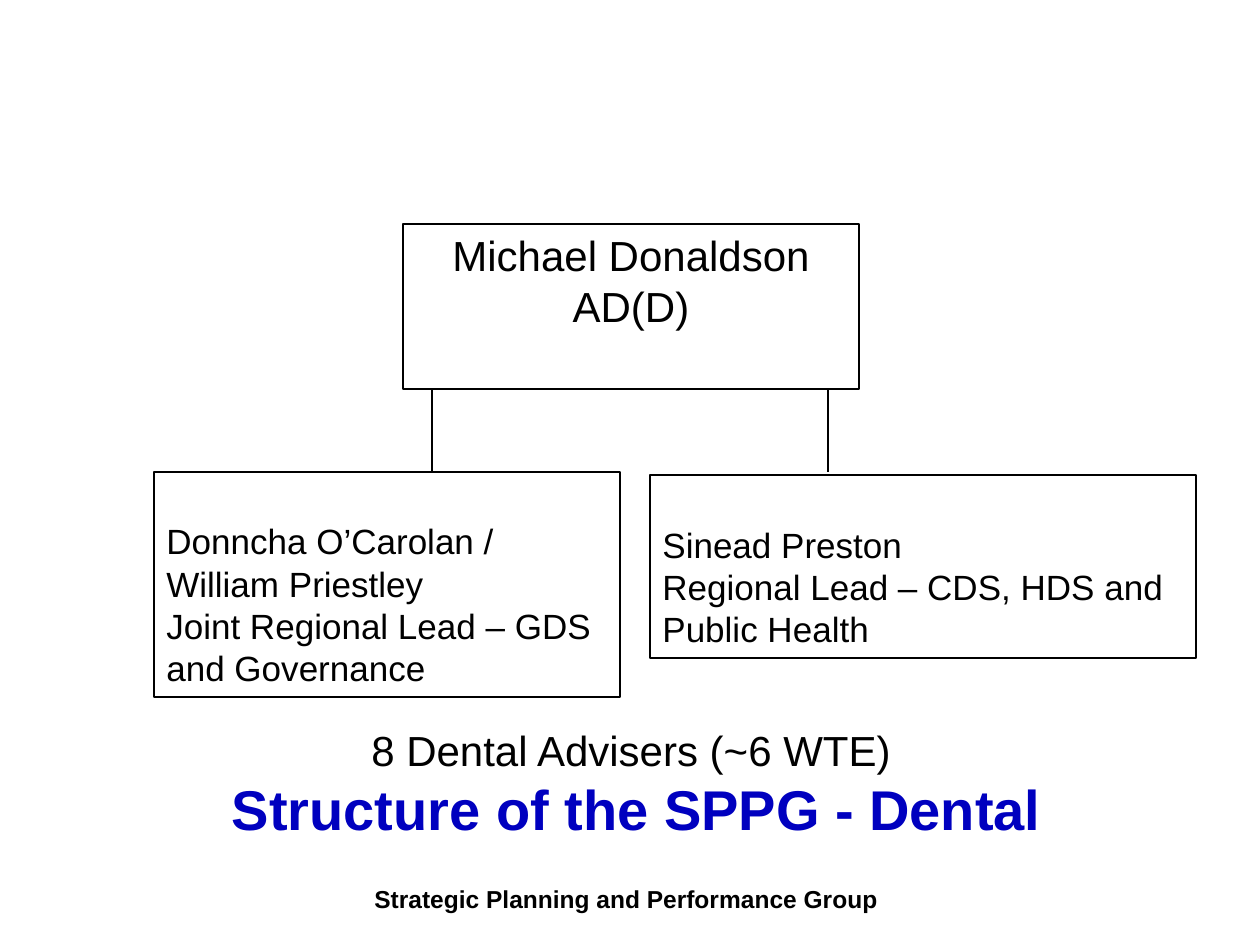
"""Builds the organisation chart slide of the SPPG dental team."""
from lxml import etree
from pptx import Presentation
from pptx.dml.color import RGBColor
from pptx.enum.shapes import MSO_CONNECTOR, MSO_SHAPE
from pptx.enum.text import MSO_ANCHOR, PP_ALIGN
from pptx.oxml.ns import qn
from pptx.util import Pt

RECT = MSO_SHAPE.RECTANGLE
LINE = MSO_CONNECTOR.STRAIGHT
TOP = MSO_ANCHOR.TOP
LEFT, MID = PP_ALIGN.LEFT, PP_ALIGN.CENTER
SCALE = 914400 / 126
HUES = {"ink": "000000", "blue": "0000BF"}


def px(*vals):
    return [round(val * SCALE) for val in vals]


def write(shape, paras, align, pad=6):
    frame = shape.text_frame
    frame.word_wrap = True
    frame.vertical_anchor = TOP
    frame.margin_top = px(pad)[0]
    for num, runs in enumerate(paras):
        para = frame.add_paragraph() if num else frame.paragraphs[0]
        para.alignment = align
        for text, size, bold, hue in runs:
            run = para.add_run()
            run.text = text
            font = run.font
            font.name, font.size, font.bold = "Arial", Pt(size), bold
            font.color.rgb = RGBColor.from_string(HUES[hue])


deck = Presentation()
deck.slide_width, deck.slide_height = px(1260, 945)
slide = deck.slides.add_slide(deck.slide_layouts[6])
shapes = slide.shapes
ink = RGBColor.from_string(HUES["ink"])

group = shapes.add_textbox(*px(362, 878, 586, 50))
write(group, [[("Strategic Planning and Performance Group", 14, True, "ink")]], LEFT)

posts = [
    ((154, 472, 466, 225), 20, LEFT, 48,
     ["Donncha O’Carolan / William Priestley",
      "Joint Regional Lead – GDS and Governance"]),
    ((650, 475, 546, 183), 20, LEFT, 48,
     ["Sinead Preston", "Regional Lead – CDS, HDS and Public Health"]),
    ((403, 224, 456, 165), 24, MID, 6, ["Michael Donaldson", "AD(D)"]),
]
for place, size, align, pad, lines in posts:
    box = shapes.add_shape(RECT, *px(*place))
    box.shadow.inherit = False
    box.fill.background()
    box.line.color.rgb = ink
    box.line.width = Pt(0.75)
    write(box, [[(text, size, False, "ink")] for text in lines], align, pad)

for x in (432, 828):
    link = shapes.add_connector(LINE, *px(x, 389, x, 472))
    link.line.color.rgb = ink
    link.line.width = Pt(0.75)
    etree.SubElement(link._element.spPr, qn("a:effectLst"))

title = shapes.add_textbox(*px(165, 668, 932, 183))
write(title, [
    [("8 Dental Advisers (~6 WTE)", 24, False, "ink")],
    [(" ", 24, False, "blue"), ("Structure of the SPPG - Dental", 32, True, "blue")],
], MID, 56)

deck.save("out.pptx")
